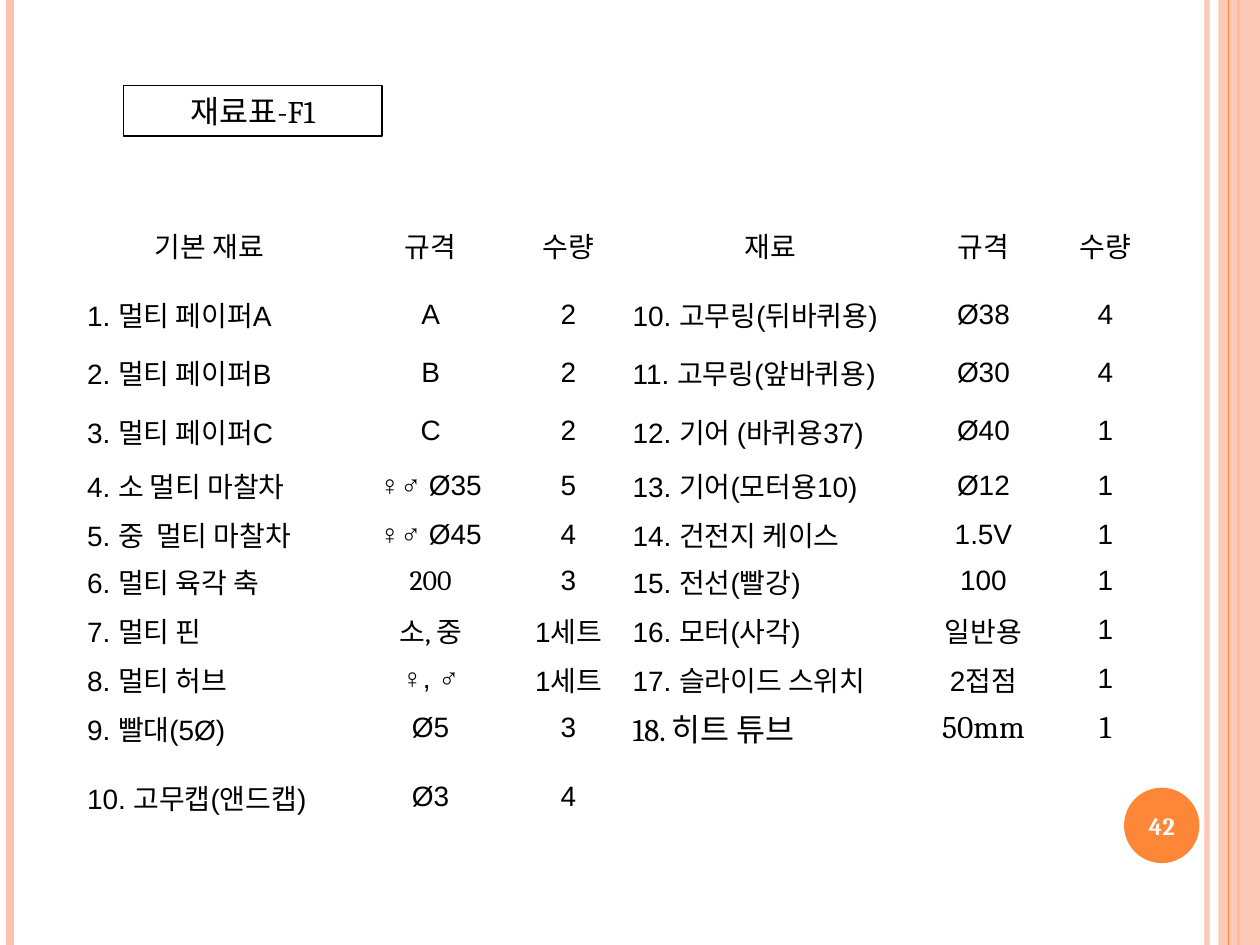
from lxml.etree import SubElement
from pptx import Presentation
from pptx.dml.color import RGBColor
from pptx.enum.shapes import MSO_CONNECTOR, MSO_SHAPE
from pptx.enum.text import MSO_ANCHOR, MSO_AUTO_SIZE, PP_ALIGN
from pptx.oxml.ns import qn
from pptx.util import Cm, Pt

BLACK = RGBColor(0, 0, 0)
WHITE = RGBColor(255, 255, 255)
ORANGE = RGBColor(0xFE, 0x86, 0x37)
PEACH = RGBColor(0xFE, 0xC3, 0xAE)

TITLE = "재료표-F1"
PAGE = "42"
HEADER = ("기본 재료", "규격", "수량", "재료", "규격", "수량")
PARTS = [
    ("1. 멀티 페이퍼A", "A", "2", "10. 고무링(뒤바퀴용)", "Ø38", "4"),
    ("2. 멀티 페이퍼B", "B", "2", "11. 고무링(앞바퀴용)", "Ø30", "4"),
    ("3. 멀티 페이퍼C", "C", "2", "12. 기어 (바퀴용37)", "Ø40", "1"),
    ("4. 소 멀티 마찰차", "♀♂ Ø35", "5", "13. 기어(모터용10)", "Ø12", "1"),
    ("5. 중  멀티 마찰차", "♀♂ Ø45", "4", "14. 건전지 케이스", "1.5V", "1"),
    ("6. 멀티 육각 축", "200", "3", "15. 전선(빨강)", "100", "1"),
    ("7. 멀티 핀", "소, 중", "1세트", "16. 모터(사각)", "일반용", "1"),
    ("8. 멀티 허브", "♀, ♂", "1세트", "17. 슬라이드 스위치", "2접점", "1"),
    ("9. 빨대(5Ø)", "Ø5", "3", "18. 히트 튜브", "50mm", "1"),
    ("10. 고무캡(앤드캡)", "Ø3", "4", "", "", ""),
]
COL_WIDTHS = (5.44, 3.48, 2.08, 6.07, 2.51, 2.41)
ROW_HEIGHTS = (1.65, 1.17, 1.17, 1.17, 1.04, 0.89, 0.89, 1.04, 0.89, 0.99, 0.89)
NAME_COLS = (0, 3)

BODY = {"name": "Arial", "size": Pt(16), "bold": False}
SERIF = {"name": "Cambria", "size": Pt(16), "bold": False}
LARGE = {"name": "Cambria", "size": Pt(18), "bold": False}
NUMBER = {"name": "Cambria", "size": Pt(14), "bold": True}
SPECIAL = {(6, 1): SERIF, (7, 1): SERIF, (9, 3): LARGE, (9, 4): LARGE, (9, 5): LARGE}

RULES = [
    (24.33, PEACH, 3, 93),
    (0.2, PEACH, 4.5, 100),
    (24.97, ORANGE, 1.5, 100),
    (24.77, ORANGE, 0.75, 100),
]
BAND_AFTER = 2


def set_alpha(el, percent):
    if percent < 100:
        color = next(el.iter(qn("a:srgbClr")))
        SubElement(color, qn("a:alpha"), val=str(percent * 1000))


def write(tf, text, fmt, color=BLACK, align=PP_ALIGN.CENTER):
    p = tf.paragraphs[0]
    p.alignment = align
    r = p.add_run()
    r.text = text
    for key, value in fmt.items():
        setattr(r.font, key, value)
    r.font.color.rgb = color


def add_rule(s, x, color, width, alpha):
    line = s.shapes.add_connector(MSO_CONNECTOR.STRAIGHT, Cm(x), 0, Cm(x), Cm(19.05))
    line.line.color.rgb = color
    line.line.width = Pt(width)
    sp_pr = line._element.spPr
    set_alpha(sp_pr, alpha)
    SubElement(sp_pr, qn("a:effectLst"))


def add_filled(s, kind, box, color, alpha=100):
    sp = s.shapes.add_shape(kind, *map(Cm, box))
    sp.shadow.inherit = False
    sp.fill.solid()
    sp.fill.fore_color.rgb = color
    sp.line.fill.background()
    set_alpha(sp._element.spPr, alpha)


def add_title(s):
    sp = s.shapes.title
    sp.left, sp.top, sp.width, sp.height = map(Cm, (2.49, 1.72, 5.21, 1.02))
    sp.line.color.rgb = BLACK
    sp.line.width = Pt(0.75)
    tf = sp.text_frame
    tf.auto_size = MSO_AUTO_SIZE.NONE
    tf.vertical_anchor = MSO_ANCHOR.MIDDLE
    write(tf, TITLE, LARGE)


def add_parts(s):
    rows = [HEADER] + PARTS
    table = s.shapes.add_table(
        len(rows), len(HEADER), Cm(1.5), Cm(4.11),
        Cm(sum(COL_WIDTHS)), Cm(sum(ROW_HEIGHTS)),
    ).table
    table.first_row = table.horz_banding = False
    for col, width in zip(table.columns, COL_WIDTHS):
        col.width = Cm(width)
    for i, (row, height) in enumerate(zip(rows, ROW_HEIGHTS)):
        table.rows[i].height = Cm(height)
        for j, text in enumerate(row):
            cell = table.cell(i, j)
            cell.fill.background()
            cell.vertical_anchor = MSO_ANCHOR.MIDDLE
            cell.margin_top = cell.margin_bottom = Cm(0.06)
            if text:
                left = i > 0 and j in NAME_COLS
                align = PP_ALIGN.LEFT if left else PP_ALIGN.CENTER
                write(cell.text_frame, text, SPECIAL.get((i, j), BODY), align=align)


def add_page_number(s):
    add_filled(s, MSO_SHAPE.OVAL, (22.66, 15.88, 1.52, 1.52), ORANGE)
    tf = s.shapes.add_textbox(*map(Cm, (22.57, 15.92, 1.7, 1.45))).text_frame
    tf.word_wrap = True
    tf.vertical_anchor = MSO_ANCHOR.MIDDLE
    write(tf, PAGE, NUMBER, WHITE)


def main():
    prs = Presentation()
    prs.slide_width, prs.slide_height = Cm(25.4), Cm(19.05)
    s = prs.slides.add_slide(prs.slide_layouts[5])
    for i, rule in enumerate(RULES):
        add_rule(s, *rule)
        if i == BAND_AFTER:
            add_filled(s, MSO_SHAPE.RECTANGLE, (24.56, 0, 0.84, 19.05), PEACH, 87)
    add_title(s)
    add_parts(s)
    add_page_number(s)
    prs.save("out.pptx")


if __name__ == "__main__":
    main()
